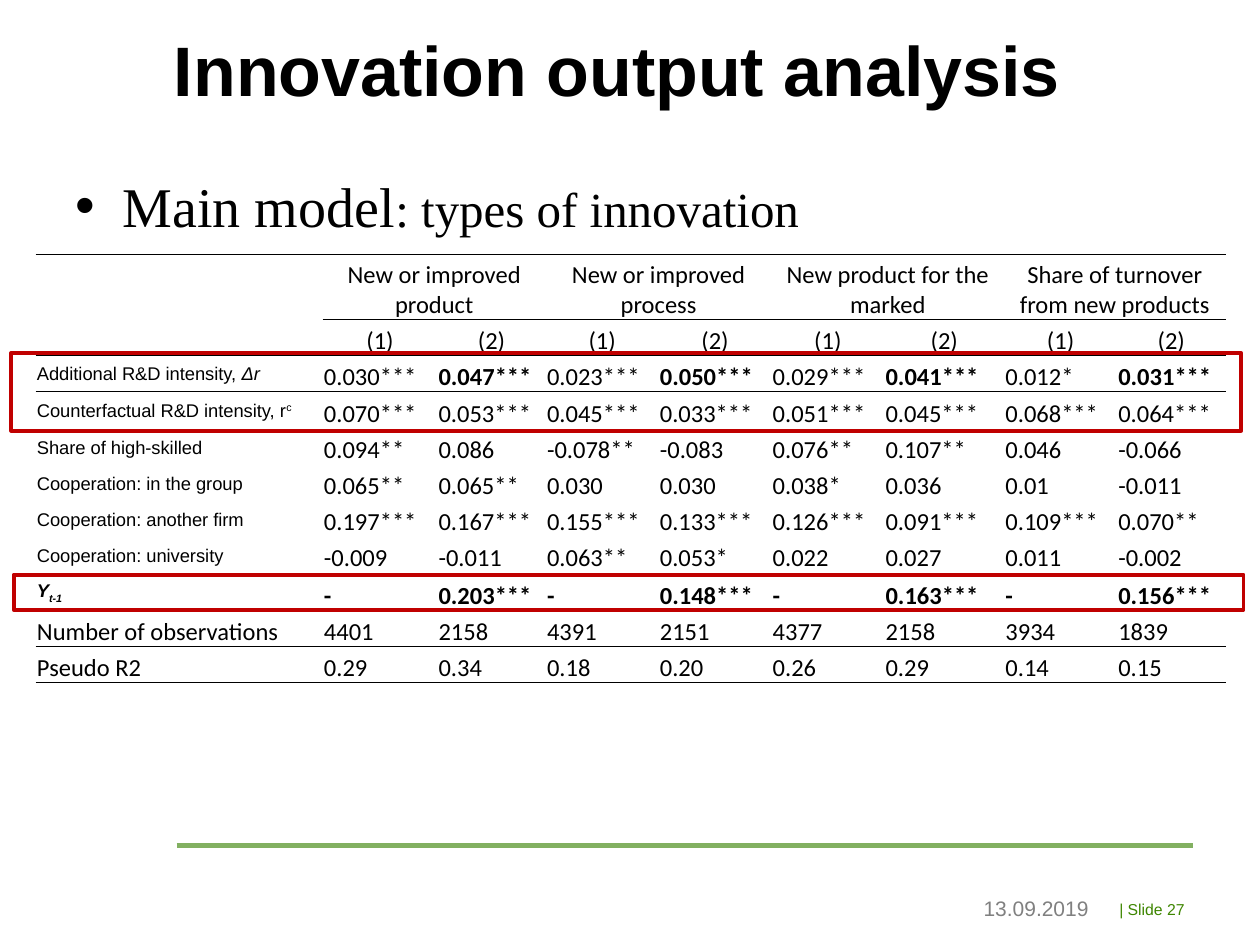
from dataclasses import dataclass
from typing import NamedTuple

from lxml import etree
from pptx import Presentation
from pptx import util as u
from pptx.dml.color import RGBColor
from pptx.enum import shapes, text
from pptx.oxml.ns import qn

COLORS = {
    "ink": "000000",
    "date": "808080",
    "number": "3E8601",
    "rule": "82B061",
    "mark": "C00000",
}
NO_GRID_STYLE = "{2D5ABB26-0587-4C30-8999-92F81FD0307C}"
COLUMN_WIDTHS = [164, 65.5, 62, 64.5, 64.5, 64.5, 68.5, 64.5, 62]
HEADER_HEIGHT, ROW_HEIGHT, TALL_ROW_HEIGHT = 37.2, 20.6, 21.5
TALL_ROWS = {3, 8}
RULES_BELOW = {0, 1, 8, 10}
GROUPS = [
    "New or improved product",
    "New or improved process",
    "New product for the marked",
    "Share of turnover from new products",
]


class Place(NamedTuple):
    left: float
    top: float
    width: float
    height: float

    def lengths(self) -> list[u.Pt]:
        return [u.Pt(value) for value in self]


@dataclass
class Result:
    label: str
    values: str
    tail: str = ""
    tail_format: dict | None = None
    label_format: dict | None = None
    bold: tuple[bool, bool] = (False, False)


SMALL = dict(size=10.5, font="Arial")
STRONG = dict(SMALL, bold=True, italic=True)
RESULTS = [
    Result("Additional R&D intensity, ",
           "0.030*** 0.047*** 0.023*** 0.050*** 0.029*** 0.041*** 0.012* 0.031***",
           "Δr", dict(SMALL, italic=True), SMALL, (False, True)),
    Result("Counterfactual R&D intensity, r",
           "0.070*** 0.053*** 0.045*** 0.033*** 0.051*** 0.045*** 0.068*** 0.064***",
           "c", dict(SMALL, baseline=30), SMALL),
    Result("Share of high-skilled",
           "0.094** 0.086 -0.078** -0.083 0.076** 0.107** 0.046 -0.066",
           label_format=SMALL),
    Result("Cooperation: in the group",
           "0.065** 0.065** 0.030 0.030 0.038* 0.036 0.01 -0.011",
           label_format=SMALL),
    Result("Cooperation: another firm",
           "0.197*** 0.167*** 0.155*** 0.133*** 0.126*** 0.091*** 0.109*** 0.070**",
           label_format=SMALL),
    Result("Cooperation: university",
           "-0.009 -0.011 0.063** 0.053* 0.022 0.027 0.011 -0.002",
           label_format=SMALL),
    Result("Y", "- 0.203*** - 0.148*** - 0.163*** - 0.156***",
           "t-1", dict(STRONG, baseline=-25), STRONG, (True, True)),
    Result("Number of observations", "4401 2158 4391 2151 4377 2158 3934 1839"),
    Result("Pseudo R2", "0.29 0.34 0.18 0.20 0.26 0.29 0.14 0.15"),
]


def write(para, words: str, *, size: float = 14, font: str = "Calibri",
          color: str = "ink", bold: bool = False, italic: bool = False,
          baseline: int = 0) -> None:
    span = para.add_run()
    span.text = words
    span.font.size = u.Pt(size)
    span.font.name = font
    span.font.bold = bold
    span.font.italic = italic
    span.font.color.rgb = RGBColor.from_string(COLORS[color])
    if baseline:
        span.font._element.set("baseline", str(baseline * 1000))


def move(shape, place: Place) -> None:
    shape.left, shape.top, shape.width, shape.height = place.lengths()


def set_margins(frame, margin: float) -> None:
    frame.margin_left = frame.margin_right = u.Pt(margin)
    frame.margin_top = frame.margin_bottom = u.Pt(margin)


def add_title(page) -> None:
    title = page.shapes.title
    move(title, Place(99.4, 15.1, 584.6, 90))
    frame = title.text_frame
    set_margins(frame, 0)
    frame.vertical_anchor = text.MSO_ANCHOR.TOP
    para = frame.paragraphs[0]
    para.alignment = text.PP_ALIGN.LEFT
    write(para, "Innovation output analysis", size=40, font="Arial", bold=True)


def add_topic(page) -> None:
    body = page.placeholders[1]
    move(body, Place(36, 94.3, 648, 43.2))
    para = body.text_frame.paragraphs[0]
    properties = para._p.get_or_add_pPr()
    properties.set("marL", str(u.Pt(27)))
    properties.set("indent", str(u.Pt(-27)))
    etree.SubElement(properties, qn("a:buChar"), char="•")
    para.space_before = u.Pt(0)
    write(para, "Main model", size=32, font="Times New Roman")
    write(para, ": types of innovation", size=28, font="Times New Roman")


def add_note(page, words: str, place: Place, *, align, anchor, **style) -> None:
    box = page.shapes.add_textbox(*place.lengths())
    box.text_frame.word_wrap = True
    box.text_frame.vertical_anchor = anchor
    para = box.text_frame.paragraphs[0]
    para.alignment = align
    write(para, words, font="Arial", **style)


def add_border(cell, side: str) -> None:
    line = etree.Element(qn(f"a:ln{side}"), w=str(u.Pt(0.5)))
    fill = etree.SubElement(line, qn("a:solidFill"))
    etree.SubElement(fill, qn("a:srgbClr"), val=COLORS["ink"])
    cell._tc.get_or_add_tcPr().insert(0, line)


def prepare_cell(cell, row: int, column: int) -> None:
    cell.margin_left = cell.margin_right = cell.margin_top = u.Pt(0.72)
    cell.margin_bottom = u.Pt(0)
    cell.vertical_anchor = text.MSO_ANCHOR.BOTTOM
    cell.fill.background()
    if row in RULES_BELOW and (row or column):
        add_border(cell, "B")
    if row == 0 or (row - 1 in RULES_BELOW and (row > 1 or column)):
        add_border(cell, "T")


def fill_header(table) -> None:
    for row in (0, 1):
        blank = table.cell(row, 0).text_frame.paragraphs[0]
        etree.SubElement(blank._p, qn("a:endParaRPr"), sz="1400")
    for index, group in enumerate(GROUPS):
        first = 1 + 2 * index
        table.cell(0, first).merge(table.cell(0, first + 1))
        headings = [(0, first, group), (1, first, "(1)"), (1, first + 1, "(2)")]
        for row, column, words in headings:
            para = table.cell(row, column).text_frame.paragraphs[0]
            para.alignment = text.PP_ALIGN.CENTER
            write(para, words)


def fill_result(table, row: int, result: Result) -> None:
    cell = table.cell(row, 0)
    para = cell.text_frame.paragraphs[0]
    if result.label_format:
        cell.vertical_anchor = text.MSO_ANCHOR.MIDDLE
        para.alignment = text.PP_ALIGN.JUSTIFY
    write(para, result.label, **(result.label_format or {}))
    if result.tail:
        write(para, result.tail, **result.tail_format)
    for index, value in enumerate(result.values.split()):
        para = table.cell(row, index + 1).text_frame.paragraphs[0]
        write(para, value, bold=result.bold[index % 2])


def add_results(page) -> None:
    place = Place(20.4, 145.4, 680, 245)
    count = len(RESULTS) + 2
    table = page.shapes.add_table(count, len(COLUMN_WIDTHS), *place.lengths()).table
    table.first_row = table.horz_banding = False
    table._tbl.tblPr.find(qn("a:tableStyleId")).text = NO_GRID_STYLE
    for column, width in zip(table.columns, COLUMN_WIDTHS):
        column.width = u.Pt(width)
    for row, line in enumerate(table.rows):
        height = TALL_ROW_HEIGHT if row in TALL_ROWS else ROW_HEIGHT
        line.height = u.Pt(height if row else HEADER_HEIGHT)
        for column, cell in enumerate(line.cells):
            prepare_cell(cell, row, column)
    fill_header(table)
    for row, result in enumerate(RESULTS, start=2):
        fill_result(table, row, result)


def add_mark(page, place: Place) -> None:
    mark = page.shapes.add_shape(shapes.MSO_SHAPE.RECTANGLE, *place.lengths())
    mark.shadow.inherit = False
    mark.fill.background()
    mark.line.color.rgb = RGBColor.from_string(COLORS["mark"])
    mark.line.width = u.Pt(2.25)


def add_rule(page, left: float, right: float, top: float) -> None:
    ends = [u.Pt(value) for value in (left, top, right, top)]
    rule = page.shapes.add_connector(shapes.MSO_CONNECTOR.STRAIGHT, *ends)
    rule.line.color.rgb = RGBColor.from_string(COLORS["rule"])
    rule.line.width = u.Pt(3)
    etree.SubElement(rule._element.spPr, qn("a:effectLst"))


def main() -> None:
    deck = Presentation()
    deck.slide_width, deck.slide_height = u.Pt(720), u.Pt(540)
    page = deck.slides.add_slide(deck.slide_layouts[1])
    add_rule(page, 101, 682, 483)
    add_title(page)
    add_note(page, "13.09.2019", Place(555, 508.3, 77, 22.3), size=12, color="date",
             align=text.PP_ALIGN.LEFT, anchor=text.MSO_ANCHOR.TOP)
    add_note(page, "| Slide 27", Place(632.2, 508.3, 51.8, 22.3), size=9, color="number",
             align=text.PP_ALIGN.RIGHT, anchor=text.MSO_ANCHOR.MIDDLE)
    add_topic(page)
    add_results(page)
    add_mark(page, Place(6.5, 201.6, 702.7, 44.6))
    add_mark(page, Place(7.9, 328.3, 702.7, 20.2))
    deck.save("out.pptx")


if __name__ == "__main__":
    main()
